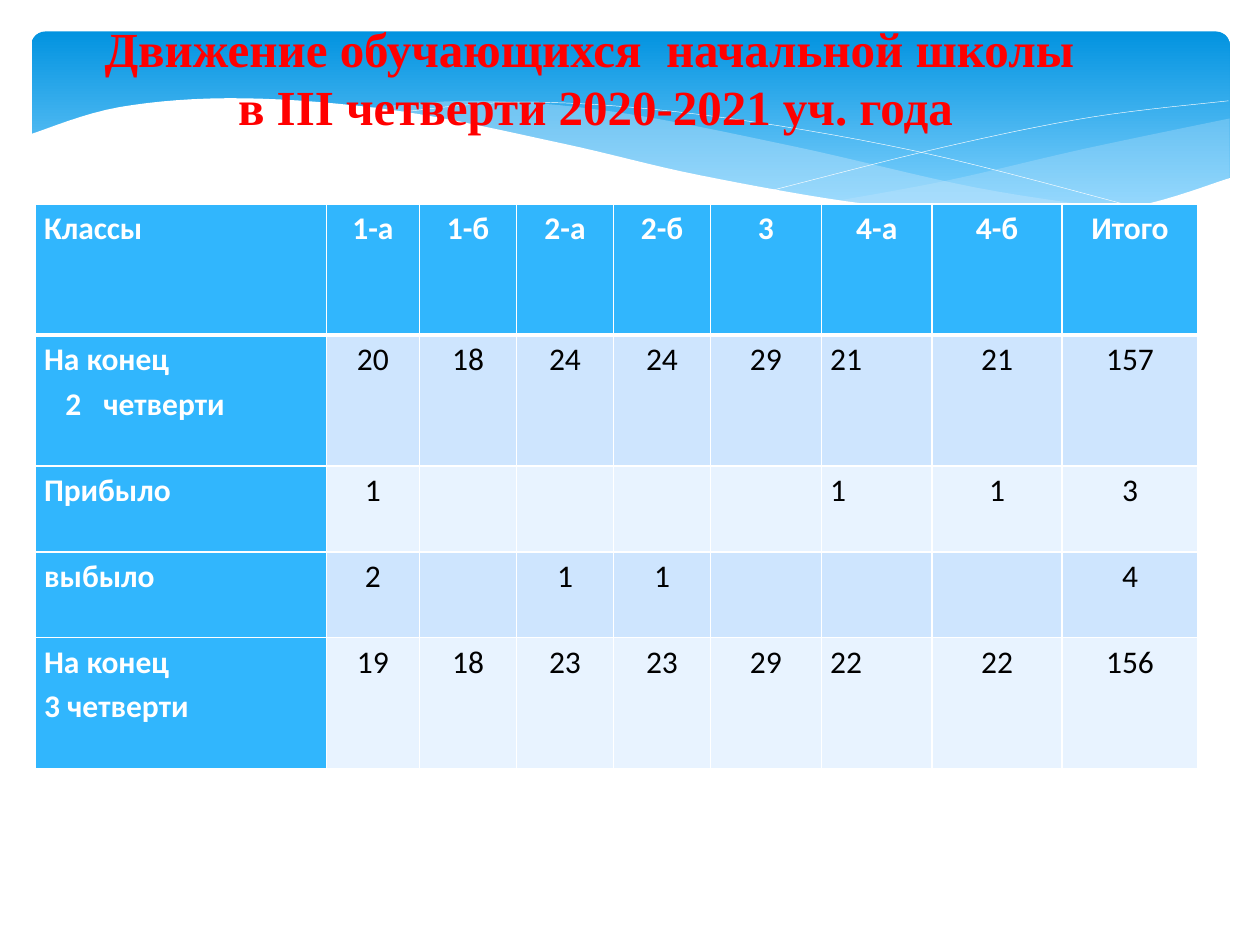
import dataclasses

import lxml.etree
import pptx
import pptx.dml.color
import pptx.enum.shapes
import pptx.enum.text
import pptx.oxml.ns
import pptx.util

Inches = pptx.util.Inches
Pt = pptx.util.Pt
Align = pptx.enum.text.PP_ALIGN
Points = list[tuple[float, float]]
qn = pptx.oxml.ns.qn

WHITE, BLACK, RED, BLUE, PALE = "FFFFFF", "000000", "FF0000", "31B6FD", "C6E7FC"
BANDS = ("CEE5FE", "E8F3FF")
STEPS = 8


@dataclasses.dataclass
class Wave:
    """Smooth edges joined end to end; with a fill they close to an area."""
    edges: list[Points]
    fill: str = ""
    alpha: int = 100


WAVES = [
    Wave([[(9.76, 0.94), (8.61, 1.18), (7.53, 1.43), (6.61, 1.6)],
          [(6.61, 1.6), (7.45, 1.69), (8.35, 1.72), (9.13, 1.62), (9.76, 1.41)]],
         PALE, 29),
    Wave([[(8.93, 1.67), (7.75, 1.49), (6.29, 1.16), (4.89, 0.89), (3.8, 0.8),
           (2.86, 0.86)],
          [(2.86, 0.86), (4.49, 1.16), (6.01, 1.5), (7.22, 1.68), (8.18, 1.73),
           (8.93, 1.67)]], PALE, 40),
    Wave([[(3.09, 0.9), (4.16, 0.81), (5.56, 0.91), (7.27, 1.2), (9.07, 1.66)]]),
    Wave([[(6.13, 1.51), (7.48, 1.17), (8.66, 0.93), (9.75, 0.8)]]),
    Wave([[(9.77, 1.41), (9, 1.64), (8.09, 1.71), (6.88, 1.62), (5.55, 1.39),
           (4.47, 1.14), (3.16, 0.88), (1.93, 0.78), (0.95, 0.85), (0.23, 1.07)],
          [(0.23, 2.24), (9.77, 2.24)]], WHITE),
]

TITLE = ("Движение обучающихся  начальной школы \n"
         "в III четверти 2020-2021 уч. года")
COLS = [2.31, 0.74] + [0.77] * 3 + [0.88] * 2 + [1.03, 1.08]
ROWS = [1.04, 1.04, 0.68, 0.68, 1.04]
LEFT_COL = 6
CELLS = [line.split("|") for line in (
    "Классы|1-а|1-б|2-а|2-б|3|4-а|4-б|Итого",
    "На конец\n\t2\tчетверти|20|18|24|24|29|21|21|157",
    "Прибыло|1|||||1|1|3",
    "выбыло|2||1|1||||4",
    "На конец\n3 четверти|19|18|23|23|29|22|22|156",
)]


def rgb(code: str) -> pptx.dml.color.RGBColor:
    return pptx.dml.color.RGBColor.from_string(code)


def style(font, name: str, size: int, color: str, bold: bool) -> None:
    font.name, font.size, font.bold = name, Pt(size), bold
    font.color.rgb = rgb(color)


def blend(a: float, b: float, c: float, d: float, t: float) -> float:
    """Catmull-Rom value between b and c."""
    bend = 2 * a - 5 * b + 4 * c - d
    twist = 3 * (b - c) + d - a
    return b + t * (c - a + t * (bend + t * twist)) / 2


def smooth(knots: Points) -> Points:
    """Sample a soft curve that passes through all knots."""
    ends = [knots[0], *knots, knots[-1]]
    curve = [knots[0]]
    for quad in zip(ends, ends[1:], ends[2:], ends[3:]):
        for step in range(1, STEPS + 1):
            x, y = (blend(*axis, step / STEPS) for axis in zip(*quad))
            curve.append((x, y))
    return curve


def draw_band(slide) -> None:
    """Draw the rounded gradient panel behind the title."""
    band = slide.shapes.add_shape(
        pptx.enum.shapes.MSO_SHAPE.ROUNDED_RECTANGLE,
        Inches(0.25), Inches(0.25), Inches(9.51), Inches(1.56))
    band.adjustments[0] = 0.07
    band.shadow.inherit = False
    band.line.fill.background()
    band.fill.gradient()
    band.fill.gradient_angle = 270
    stops = band.fill.gradient_stops
    for stop, place, code in zip(stops, (0, 0.9), ("0293E0", "83D3FE")):
        stop.position = place
        stop.color.rgb = rgb(code)


def draw_wave(slide, wave: Wave) -> None:
    start, *rest = [(Inches(x), Inches(y))
                    for edge in wave.edges for x, y in smooth(edge)]
    pen = slide.shapes.build_freeform(*start)
    pen.add_line_segments(rest, close=bool(wave.fill))
    shape = pen.convert_to_shape()
    shape.shadow.inherit = False
    if not wave.fill:
        shape.fill.background()
        shape.line.color.rgb = rgb(WHITE)
        shape.line.width = Pt(0.25)
        return
    shape.line.fill.background()
    shape.fill.solid()
    shape.fill.fore_color.rgb = rgb(wave.fill)
    if wave.alpha < 100:
        tone = shape._element.spPr.find(".//" + qn("a:srgbClr"))
        lxml.etree.SubElement(tone, qn("a:alpha"), val=str(wave.alpha * 1000))


def write_title(slide) -> None:
    title = slide.shapes.title
    title.left, title.top = Inches(0.69), Inches(0.09)
    title.width, title.height = Inches(8.07), Inches(1.04)
    slide.shapes._spTree.append(title._element)  # in front of the waves
    frame = title.text_frame
    frame.text = TITLE
    frame.word_wrap = False
    frame.auto_size = pptx.enum.text.MSO_AUTO_SIZE.NONE
    frame.vertical_anchor = pptx.enum.text.MSO_ANCHOR.MIDDLE
    for para in frame.paragraphs:
        para.alignment = Align.CENTER
        for run in para.runs:
            style(run.font, "Times New Roman", 28, RED, True)


def add_edge(cell, index: int, tag: str, width: float) -> None:
    edge = lxml.etree.Element(qn(tag), w=str(int(Pt(width))))
    fill = lxml.etree.SubElement(edge, qn("a:solidFill"))
    lxml.etree.SubElement(fill, qn("a:srgbClr"), val=WHITE)
    cell._tc.get_or_add_tcPr().insert(index, edge)


def add_tabs(para, *stops: float) -> None:
    tabs = lxml.etree.SubElement(para._p.get_or_add_pPr(), qn("a:tabLst"))
    for stop in stops:
        lxml.etree.SubElement(tabs, qn("a:tab"), pos=str(int(Inches(stop))), algn="l")


def fill_cell(cell, row: int, col: int) -> None:
    head = row == 0 or col == 0
    cell.fill.solid()
    cell.fill.fore_color.rgb = rgb(BLUE if head else BANDS[(row - 1) % 2])
    cell.margin_left = cell.margin_right = Inches(0.07)
    cell.margin_top = cell.margin_bottom = 0
    widths = (1, 1, 3 if row == 1 else 1, 3 if row == 0 else 1)
    for index, (side, width) in enumerate(zip("LRTB", widths)):
        add_edge(cell, index, "a:ln" + side, width)
    cell.text_frame.text = CELLS[row][col]
    left = col == 0 or (row > 0 and col == LEFT_COL)
    for para in cell.text_frame.paragraphs:
        para.alignment = Align.LEFT if left else Align.CENTER
        para.line_spacing = 1.15
        if "\t" in para.text:
            add_tabs(para, 0.17, 0.47)
        for run in para.runs:
            style(run.font, "Calibri", 18, WHITE if head else BLACK, head)


def draw_table(slide) -> None:
    table = slide.shapes.add_table(
        len(ROWS), len(COLS), Inches(0.28), Inches(1.62),
        Inches(sum(COLS)), Inches(sum(ROWS))).table
    table.first_col = True
    for col, width in zip(table.columns, COLS):
        col.width = Inches(width)
    for row, height in enumerate(ROWS):
        table.rows[row].height = Inches(height)
        for col in range(len(COLS)):
            fill_cell(table.cell(row, col), row, col)


def main() -> None:
    deck = pptx.Presentation()
    deck.slide_width, deck.slide_height = Inches(10), Inches(7.5)
    slide = deck.slides.add_slide(deck.slide_layouts[5])
    draw_band(slide)
    for wave in WAVES:
        draw_wave(slide, wave)
    write_title(slide)
    draw_table(slide)
    deck.save("out.pptx")


if __name__ == "__main__":
    main()
